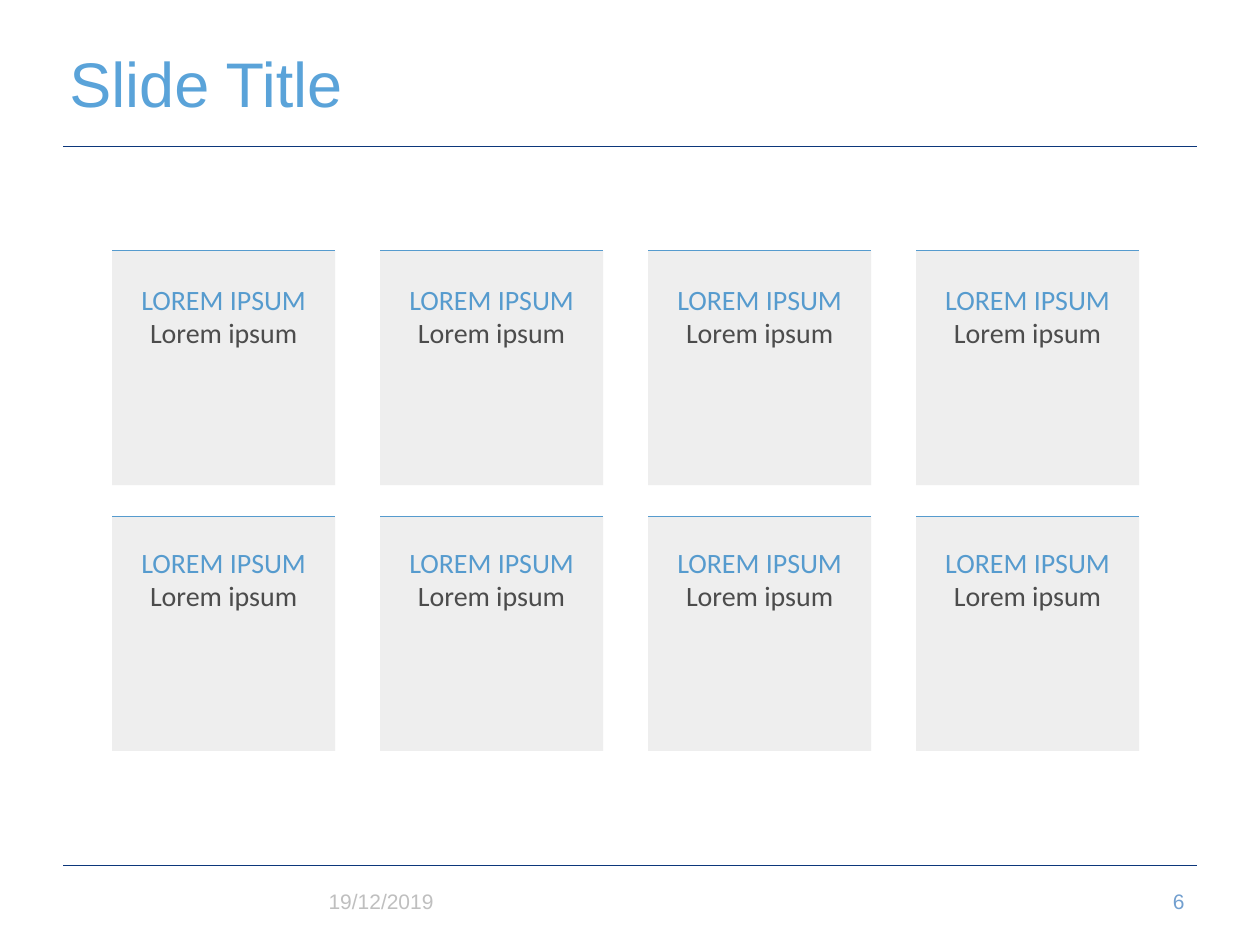
from lxml import etree
from pptx import Presentation
from pptx.dml.color import RGBColor
from pptx.enum.shapes import MSO_CONNECTOR, MSO_SHAPE
from pptx.enum.text import MSO_ANCHOR, PP_ALIGN
from pptx.oxml.ns import qn
from pptx.util import Inches, Pt

# Content
TITLE = "Slide Title"
DATE, PAGE = "19/12/2019", "6"
CARD_ROWS = [[("LOREM IPSUM", "Lorem ipsum")] * 4 for _ in range(2)]

# Colours
NAVY, TITLE_BLUE, BLUE = "0C377B", "5AA3D9", "569BCE"
PANEL, DARK, PALE, PAGE_BLUE = "EEEEEE", "4C4C4C", "BFBFBF", "729FCF"

# Grid, in inches
LEFT, TOP = 0.89, 1.99
CARD_W, CARD_H = 1.77, 1.86
STEP_X, STEP_Y = 2.127, 2.11
TEXT_TOP, TEXT_STEP, TEXT_H = 2.19, 2.09, 0.64
RULE_X, RULE_W, RULE_YS = 0.5, 9, (1.16, 6.87)


def rgb(value):
    return RGBColor.from_string(value)


def add_rule(x, y, width, color, weight):
    line = slide.shapes.add_connector(
        MSO_CONNECTOR.STRAIGHT, Inches(x), Inches(y), Inches(x + width), Inches(y))
    line.line.color.rgb = rgb(color)
    line.line.width = Pt(weight)
    etree.SubElement(line._element.spPr, qn("a:effectLst"))


def add_panel(x, y):
    sp = slide.shapes.add_shape(
        MSO_SHAPE.RECTANGLE, Inches(x), Inches(y), Inches(CARD_W), Inches(CARD_H))
    sp.shadow.inherit = False
    sp.fill.solid()
    sp.fill.fore_color.rgb = rgb(PANEL)
    sp.line.fill.background()


def write(tf, lines, size, font, align, anchor):
    tf.word_wrap = True
    tf.vertical_anchor = anchor
    for i, (text, color) in enumerate(lines):
        p = tf.add_paragraph() if i else tf.paragraphs[0]
        p.alignment = align
        r = p.add_run()
        r.text = text
        r.font.size = Pt(size)
        r.font.name = font
        r.font.color.rgb = rgb(color)


def add_text(x, y, width, height, *style):
    box = slide.shapes.add_textbox(Inches(x), Inches(y), Inches(width), Inches(height))
    write(box.text_frame, *style)


prs = Presentation()
prs.slide_width, prs.slide_height = Inches(10), Inches(7.5)
slide = prs.slides.add_slide(prs.slide_layouts[5])

# Title and rules
title = slide.shapes.title
title.left, title.top = Inches(0.5), Inches(0.26)
title.width, title.height = Inches(9), Inches(0.78)
tf = title.text_frame
tf.margin_left = tf.margin_right = tf.margin_top = tf.margin_bottom = Inches(0.05)
write(tf, [(TITLE, TITLE_BLUE)], 36, "Arial", PP_ALIGN.LEFT, MSO_ANCHOR.MIDDLE)
for y in RULE_YS:
    add_rule(RULE_X, y, RULE_W, NAVY, 0.5)

# Cards: panel, top rule, text
for row, cards in enumerate(CARD_ROWS):
    for col, (heading, body) in enumerate(cards):
        x, y = LEFT + col * STEP_X, TOP + row * STEP_Y
        add_panel(x, y)
        add_rule(x, y, CARD_W, BLUE, 0.75)
        add_text(x, TEXT_TOP + row * TEXT_STEP, CARD_W, TEXT_H,
                 [(heading, BLUE), (body, DARK)], 16, "Calibri",
                 PP_ALIGN.CENTER, MSO_ANCHOR.TOP)

# Footer
add_text(2.51, 6.95, 1.5, 0.4, [(DATE, PALE)], 12, "Arial",
         PP_ALIGN.LEFT, MSO_ANCHOR.MIDDLE)
add_text(8.7, 6.95, 0.8, 0.4, [(PAGE, PAGE_BLUE)], 12, "Arial",
         PP_ALIGN.RIGHT, MSO_ANCHOR.MIDDLE)

prs.save("out.pptx")
